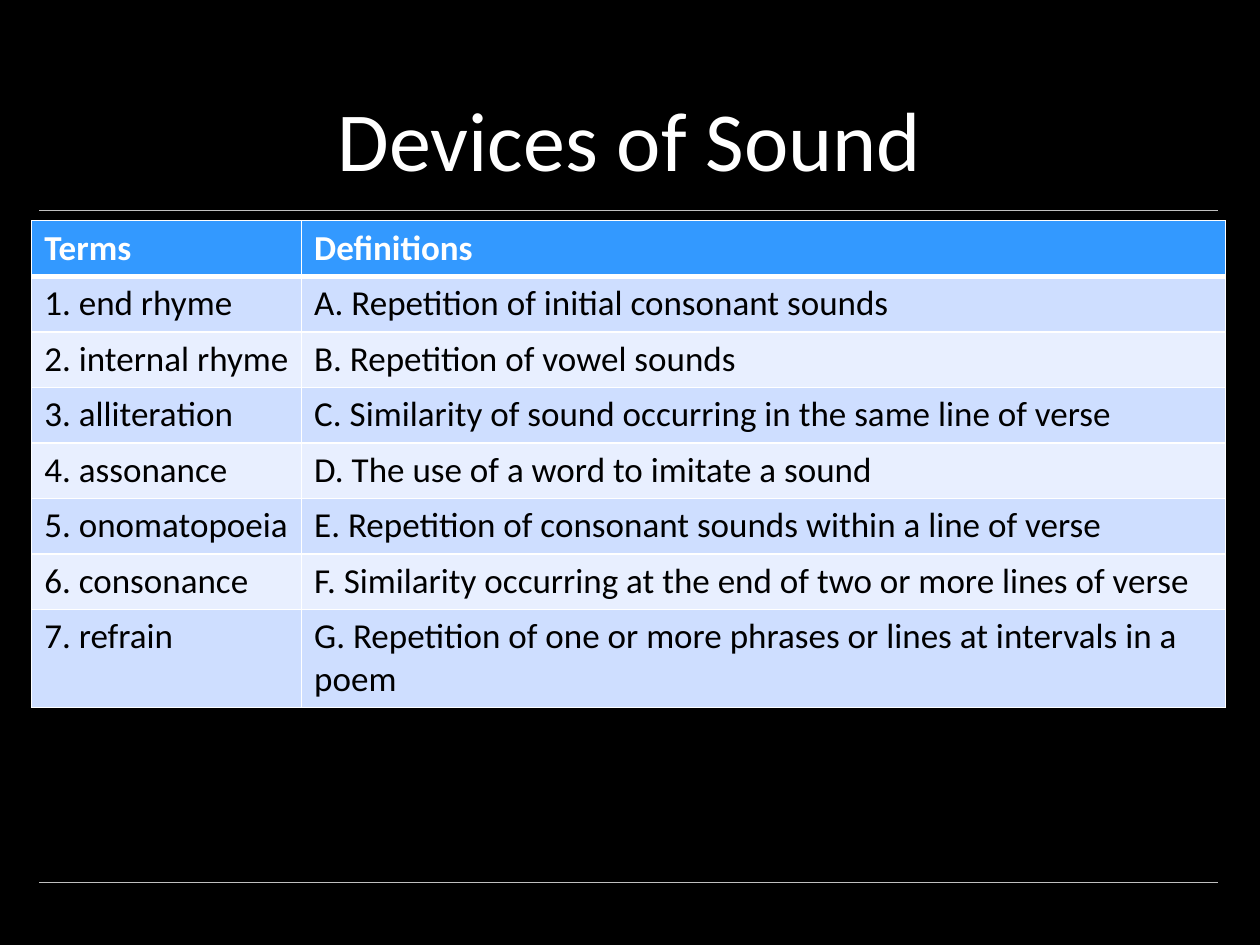
from lxml import etree
from pptx import Presentation
from pptx.dml.color import RGBColor
from pptx.enum.shapes import MSO_CONNECTOR
from pptx.enum.text import MSO_ANCHOR, MSO_AUTO_SIZE, PP_ALIGN
from pptx.oxml.ns import qn
from pptx.util import Cm, Pt

STRAIGHT = MSO_CONNECTOR.STRAIGHT
BOTTOM = MSO_ANCHOR.BOTTOM
NO_FIT = MSO_AUTO_SIZE.NONE
CENTER = PP_ALIGN.CENTER
TITLE_ONLY = 5

ROWS = [
    ("Terms", "Definitions"),
    ("1. end rhyme", "A. Repetition of initial consonant sounds"),
    ("2. internal rhyme", "B. Repetition of vowel sounds"),
    ("3. alliteration", "C. Similarity of sound occurring in the same line of verse"),
    ("4. assonance", "D. The use of a word to imitate a sound"),
    ("5. onomatopoeia", "E. Repetition of consonant sounds within a line of verse"),
    ("6. consonance", "F. Similarity occurring at the end of two or more lines of verse"),
    ("7. refrain", "G. Repetition of one or more phrases or lines at intervals in a poem"),
]


def color(code):
    return RGBColor.from_string(code)


def assign(item, values):
    """Set each named attribute of item."""
    for name, value in values.items():
        setattr(item, name, value)


def border(cell, side, width, code):
    line = etree.SubElement(cell._tc.get_or_add_tcPr(), qn("a:ln" + side), w=str(Pt(width)))
    fill = etree.SubElement(line, qn("a:solidFill"))
    etree.SubElement(fill, qn("a:srgbClr"), val=code)


class Board:
    font = "Calibri"
    back, white, black = "000000", "FFFFFF", "000000"
    rule_hue, head = "BFBFBF", "3399FF"
    bands = ("E8EFFF", "CEDEFF")

    def __init__(self, deck):
        self.slide = deck.slides.add_slide(deck.slide_layouts[TITLE_ONLY])
        fill = self.slide.background.fill
        fill.solid()
        fill.fore_color.rgb = color(self.back)

    def label(self, frame, text, size, hue, bold=False):
        frame.text = text
        font = frame.paragraphs[0].runs[0].font
        assign(font, {"name": self.font, "size": Pt(size), "bold": bold})
        font.color.rgb = color(hue)

    def title(self, text, left, top, width, height):
        shape = self.slide.shapes.title
        assign(shape, {"left": Cm(left), "top": Cm(top),
                       "width": Cm(width), "height": Cm(height)})
        frame = shape.text_frame
        self.label(frame, text, 48, self.white)
        assign(frame, {"vertical_anchor": BOTTOM, "auto_size": NO_FIT, "word_wrap": True})
        frame.paragraphs[0].alignment = CENTER

    def rule(self, left, right, y):
        line = self.slide.shapes.add_connector(STRAIGHT, Cm(left), Cm(y), Cm(right), Cm(y))
        line.line.width = Pt(0.25)
        line.line.color.rgb = color(self.rule_hue)
        etree.SubElement(line._element.spPr, qn("a:effectLst"))

    def table(self, rows, left, top, widths, height):
        """Draw rows of text; height is that of one row."""
        frame = self.slide.shapes.add_table(
            len(rows), len(widths), Cm(left), Cm(top),
            Cm(sum(widths)), Cm(height * len(rows)))
        grid = frame.table
        for col, width in zip(grid.columns, widths):
            col.width = Cm(width)
        for r, row in enumerate(rows):
            grid.rows[r].height = Cm(height)
            for c, text in enumerate(row):
                self.cell(grid.cell(r, c), text, r)

    def cell(self, cell, text, row):
        first = row == 0
        self.label(cell.text_frame, text, 20, self.white if first else self.black, first)
        thick = {0: "B", 1: "T"}.get(row)
        for side in "LRTB":
            border(cell, side, 3 if side == thick else 1, self.white)
        cell.fill.solid()
        cell.fill.fore_color.rgb = color(self.head if first else self.bands[row % 2])


def main():
    deck = Presentation()
    assign(deck, {"slide_width": Cm(25.4), "slide_height": Cm(19.05)})
    board = Board(deck)
    for y in (4.24, 17.78):
        board.rule(0.79, 24.56, y)
    board.title("Devices of Sound", 1.78, 0.3, 21.82, 3.63)
    board.table(ROWS, 0.64, 4.45, (5.44, 18.62), 1.04)
    deck.save("out.pptx")


if __name__ == "__main__":
    main()
